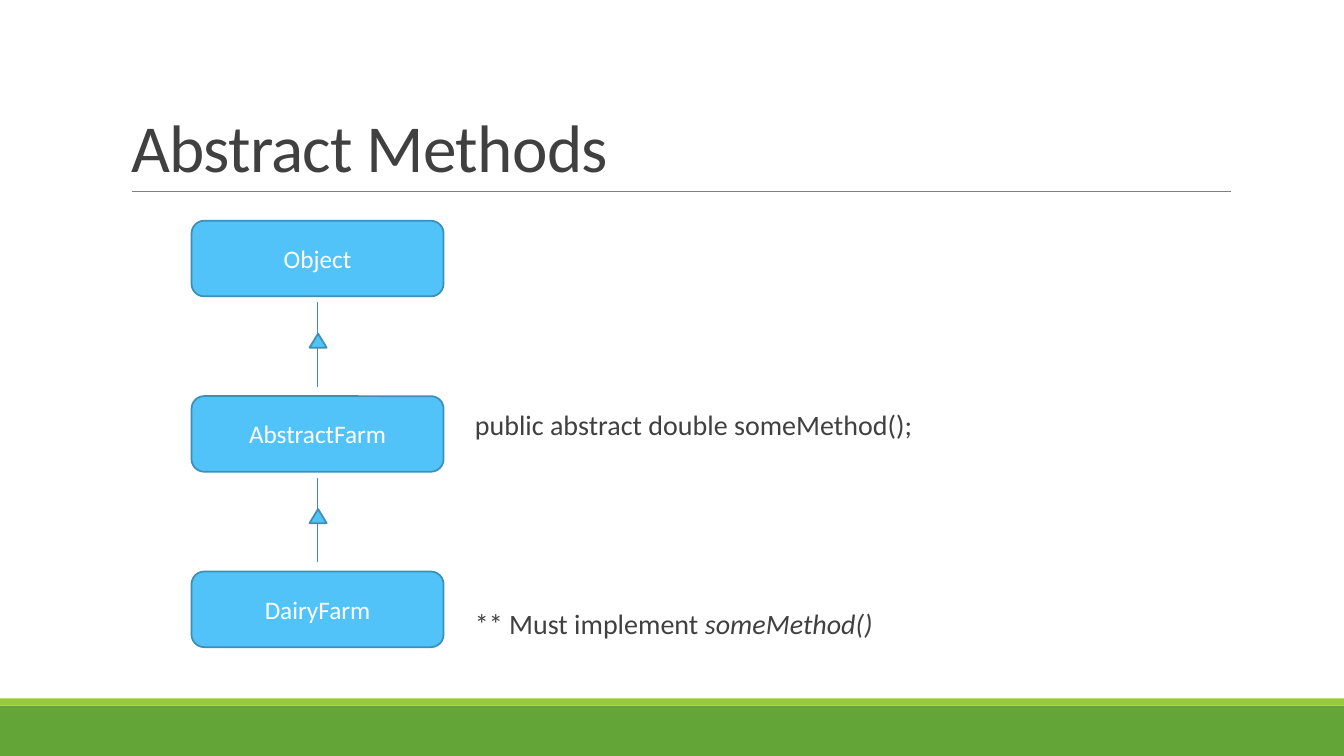
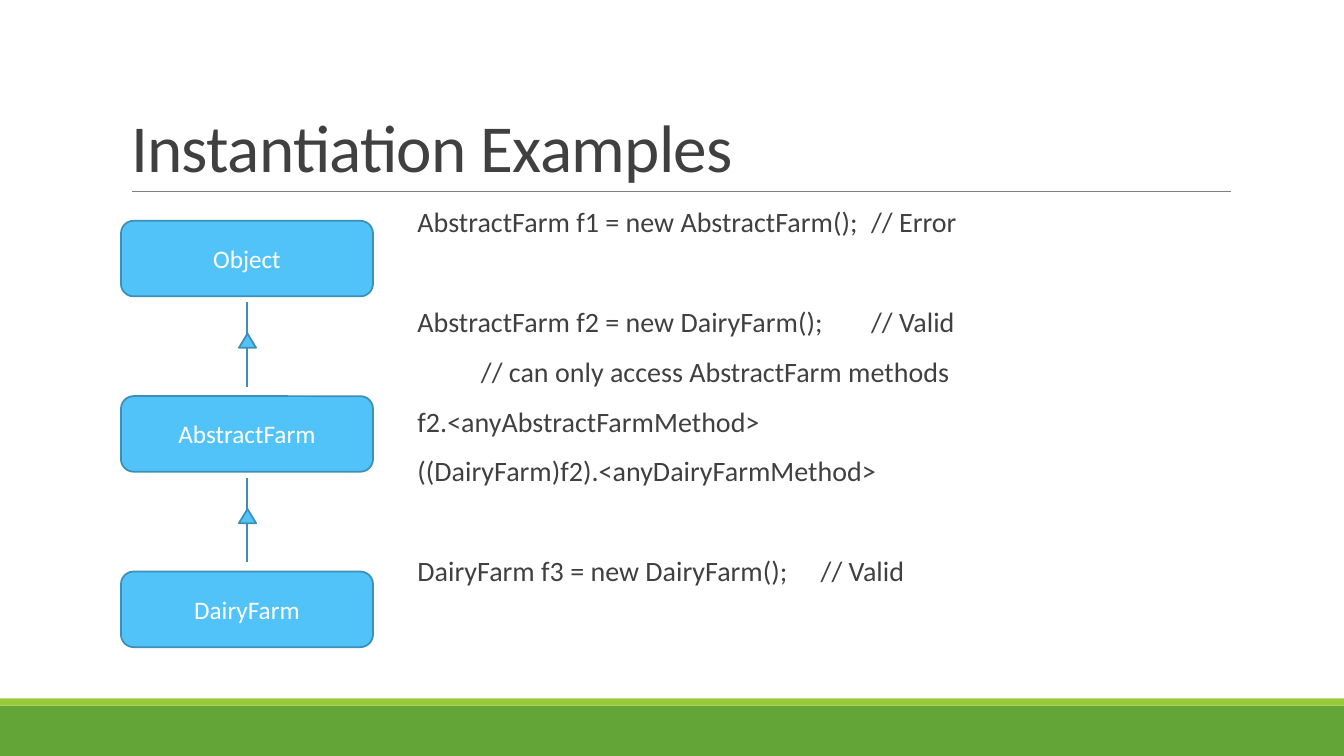
from lxml import etree
from pptx import Presentation
from pptx.dml.color import RGBColor
from pptx.enum.shapes import MSO_CONNECTOR, MSO_SHAPE
from pptx.enum.text import MSO_ANCHOR, MSO_AUTO_SIZE, PP_ALIGN
from pptx.oxml.ns import qn
from pptx.util import Inches, Pt

RECT = MSO_SHAPE.RECTANGLE
ROUND = MSO_SHAPE.ROUNDED_RECTANGLE
ARROW = MSO_SHAPE.ISOSCELES_TRIANGLE
LINE = MSO_CONNECTOR.STRAIGHT
LEFT, CENTER = PP_ALIGN.LEFT, PP_ALIGN.CENTER
BOTTOM, MIDDLE, TOP = MSO_ANCHOR.BOTTOM, MSO_ANCHOR.MIDDLE, MSO_ANCHOR.TOP

GREEN, LIME, GRAY = "63A537", "99CB38", "808080"
DARK, WHITE, BLUE, EDGE = "404040", "FFFFFF", "51C3F9", "3C90B8"
ROW = 35.5


def paint(fill, color):
    fill.solid()
    fill.fore_color.rgb = RGBColor.from_string(color)


def write(para, *parts, size=20, color=DARK, align=LEFT, lead=1.0,
          before=0, after=0, indent=0, tab=0, track=0):
    para.alignment = align
    para.line_spacing = lead
    para.space_before, para.space_after = Pt(before), Pt(after)
    prop = para._p.get_or_add_pPr()
    prop.set("marL", str(Inches(indent)))
    prop.set("indent", "0")
    etree.SubElement(prop, qn("a:buNone"))
    if tab:
        stops = etree.SubElement(prop, qn("a:tabLst"))
        etree.SubElement(stops, qn("a:tab"), pos=str(Inches(tab)), algn="l")
    for i, part in enumerate(parts):
        run = para.add_run()
        run.text = part
        run.font.name = "Calibri"
        run.font.size = Pt(size)
        run.font.italic = i > 0
        paint(run.font.fill, color)
        if track:
            run._r.get_or_add_rPr().set("spc", str(track))


deck = Presentation()
deck.slide_width, deck.slide_height = Inches(13.33), Inches(7.5)
base = deck.slide_layouts[1]
head = base.placeholders[0]
head.left, head.top = Inches(1.2), Inches(0.31)
head.width, head.height = Inches(11), Inches(1.59)

pages = [
    ("Abstract Methods", 1.9, (4.71, 4.03, 7.49, 2.39), [
        (["public abstract double someMethod();"], 0, 0, 0),
        (["** Must implement ", "someMethod()"], 3, 0, 0),
    ]),
    ("Instantiation Examples", 1.2, (4.14, 2.02, 7.95, 4.4), [
        (["AbstractFarm f1 = new AbstractFarm();\t// Error"], 0, 0, 4.55),
        (["AbstractFarm f2 = new DairyFarm();\t// Valid"], 1, 0, 4.2),
        (["// can only access AbstractFarm methods"], 0, 0.63, 0),
        (["f2.<anyAbstractFarmMethod>"], 0, 0, 0),
        (["((DairyFarm)f2).<anyDairyFarmMethod>"], 0, 0, 0),
        (["DairyFarm f3 = new DairyFarm();\t// Valid"], 1, 0, 3.8),
    ]),
]

for page, (name, left, area, lines) in enumerate(pages):
    slide = deck.slides.add_slide(base)
    shapes = slide.shapes

    if page == 0:
        tree = base.element.cSld.spTree
        for top, high, color in [(7, 0.5, GREEN), (6.93, 0.07, LIME)]:
            band = shapes.add_shape(RECT, 0, Inches(top), deck.slide_width, Inches(high))
            band.shadow.inherit = False
            paint(band.fill, color)
            band.line.fill.background()
            tree.append(band.element)
        rule = shapes.add_connector(LINE, Inches(1.31), Inches(1.9), Inches(12.21), Inches(1.9))
        rule.line.width = Pt(0.5)
        paint(rule.line.fill, GRAY)
        etree.SubElement(rule.element.spPr, qn("a:effectLst"))
        tree.append(rule.element)

    frame = shapes.title.text_frame
    frame.auto_size = MSO_AUTO_SIZE.NONE
    frame.vertical_anchor = BOTTOM
    write(frame.paragraphs[0], name, size=48, lead=0.85, track=-50)

    body = slide.placeholders[1]
    body.left, body.top, body.width, body.height = map(Inches, area)
    frame = body.text_frame
    frame.auto_size = MSO_AUTO_SIZE.NONE
    frame.vertical_anchor = TOP
    frame.margin_left = frame.margin_right = 0
    for i, (parts, skip, indent, tab) in enumerate(lines):
        para = frame.add_paragraph() if i else frame.paragraphs[0]
        write(para, *parts, lead=0.9, before=12 + skip * ROW, after=2,
              indent=indent, tab=tab)

    mid = left + 1.25
    for i, label in enumerate(["Object", "AbstractFarm", "DairyFarm"]):
        top = 2.19 + i * 1.74
        nodes = [shapes.add_shape(ROUND, Inches(left), Inches(top), Inches(2.5), Inches(0.75))]
        frame = nodes[0].text_frame
        frame.vertical_anchor = MIDDLE
        write(frame.paragraphs[0], label, size=18, color=WHITE, align=CENTER)
        if i < 2:
            link = shapes.add_connector(LINE, Inches(mid), Inches(top + 1.65),
                                        Inches(mid), Inches(top + 0.81))
            link.line.width = Pt(1.25)
            paint(link.line.fill, EDGE)
            etree.SubElement(link.element.spPr, qn("a:effectLst"))
            nodes.append(shapes.add_shape(ARROW, Inches(mid - 0.08), Inches(top + 1.12),
                                          Inches(0.17), Inches(0.14)))
        for node in nodes:
            node.shadow.inherit = False
            paint(node.fill, BLUE)
            paint(node.line.fill, EDGE)
            node.line.width = Pt(1.25)

deck.save("out.pptx")
